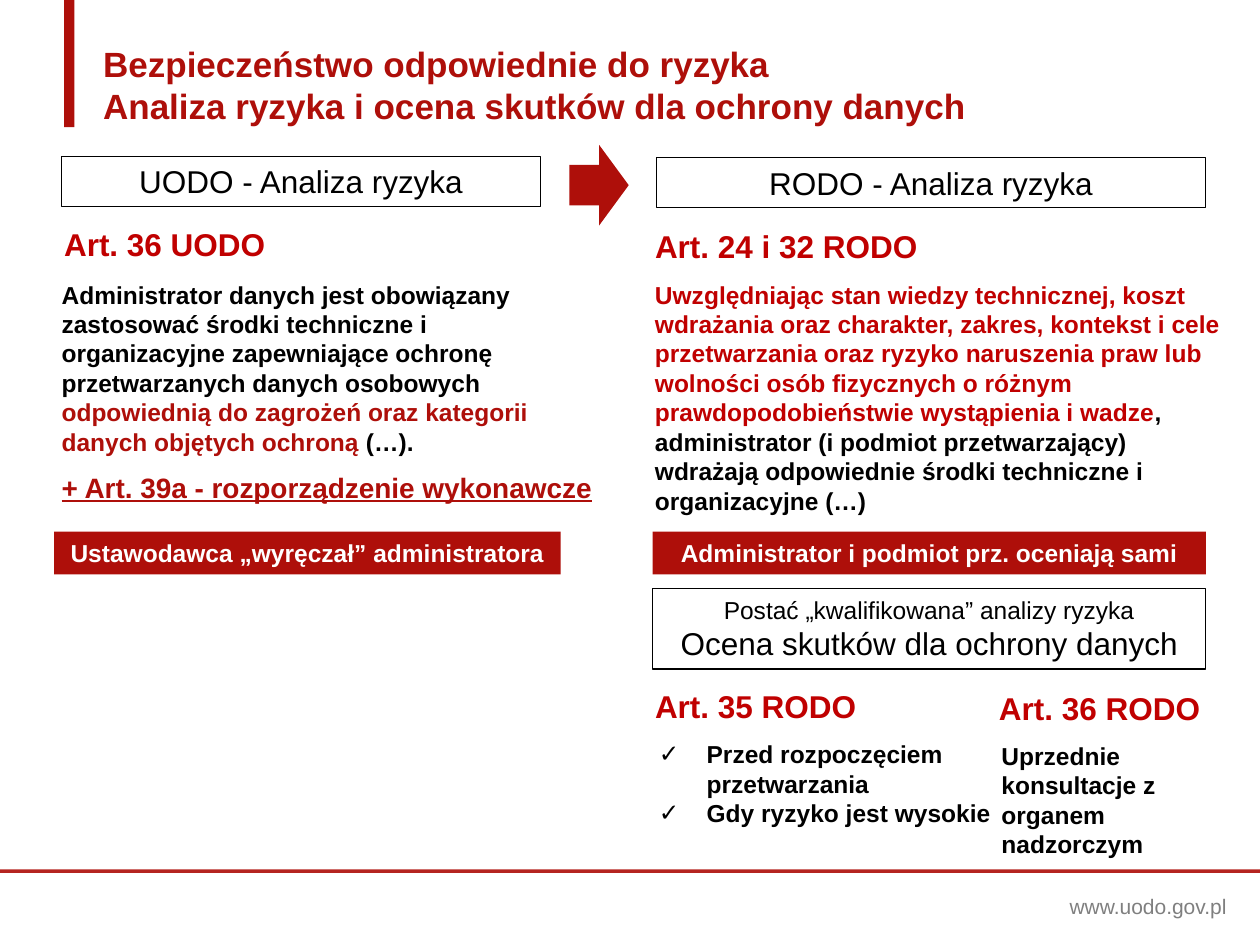
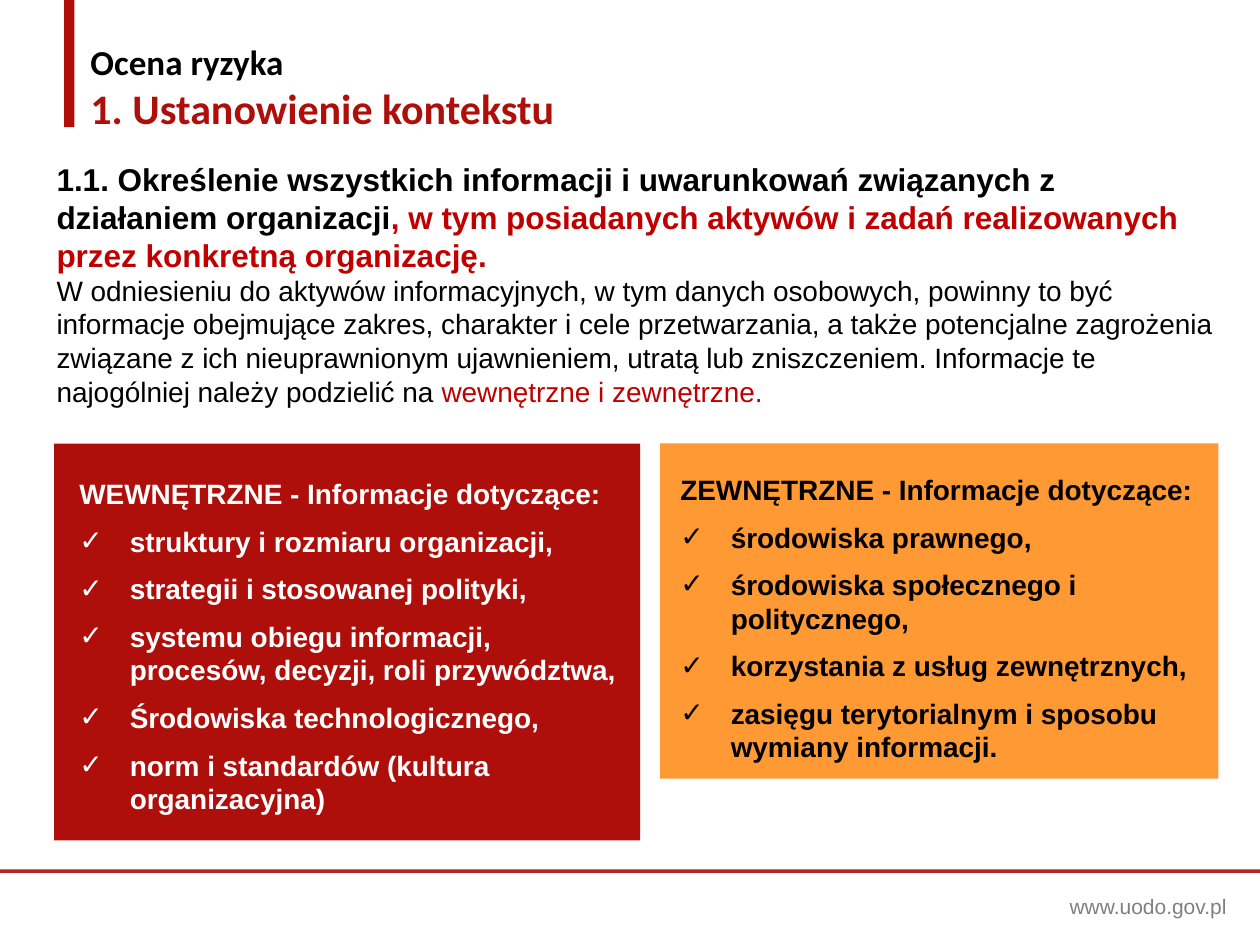
from dataclasses import dataclass, field
from typing import NamedTuple, Optional

from lxml.etree import SubElement
from pptx import Presentation
from pptx.dml.color import RGBColor
from pptx.enum.shapes import MSO_SHAPE
from pptx.enum.text import MSO_ANCHOR, PP_ALIGN
from pptx.oxml.ns import qn
from pptx.util import Inches, Pt

COLS, ROWS = 100, 75
COLORS = {
    "brand": "AE0F0A",
    "accent": "C00000",
    "orange": "FF9933",
    "black": "000000",
    "white": "FFFFFF",
    "gray": "7F7F7F",
}

prs = Presentation()
prs.slide_width, prs.slide_height = Inches(10), Inches(7.5)


class Box(NamedTuple):
    col: float
    row: float
    cols: float
    rows: float


class Run(NamedTuple):
    text: str
    color: str = "black"
    size: float = 14
    bold: bool = True
    underline: bool = False
    font: str = "Arial"


class Para(NamedTuple):
    runs: list[Run]
    before: float = 0
    indent: float = 0


@dataclass
class Block:
    box: Box
    paras: list[Para] = field(default_factory=list)
    fill: Optional[str] = None
    line: Optional[str] = None
    shape: Optional[MSO_SHAPE] = None
    alpha: int = 100
    center: bool = False
    anchor: MSO_ANCHOR = MSO_ANCHOR.TOP
    insets: tuple[float, float, float, float] = (0.1, 0.05, 0.1, 0.05)


def rgb(name: str) -> RGBColor:
    return RGBColor.from_string(COLORS[name])


def para(text: str, *, before: float = 0, indent: float = 0, **fmt) -> Para:
    return Para([Run(text, **fmt)], before, indent)


def add_bullet(p, indent: float) -> None:
    pPr = p._p.get_or_add_pPr()
    pPr.set("marL", str(Inches(indent)))
    pPr.set("indent", str(-Inches(indent)))
    SubElement(pPr, qn("a:buFont")).set("typeface", "Arial")
    SubElement(pPr, qn("a:buChar")).set("char", "✓")


def fill_text(tf, block: Block) -> None:
    tf.word_wrap = True
    tf.vertical_anchor = block.anchor
    tf.margin_left, tf.margin_top, tf.margin_right, tf.margin_bottom = map(Inches, block.insets)
    for i, item in enumerate(block.paras):
        p = tf.add_paragraph() if i else tf.paragraphs[0]
        p.alignment = PP_ALIGN.CENTER if block.center else PP_ALIGN.LEFT
        p.space_before = Pt(item.before)
        if item.indent:
            add_bullet(p, item.indent)
        for run in item.runs:
            r = p.add_run()
            r.text = run.text
            r.font.name = run.font
            r.font.size = Pt(run.size)
            r.font.bold = run.bold
            r.font.underline = run.underline
            r.font.color.rgb = rgb(run.color)


def draw(slide, block: Block) -> None:
    box = block.box
    place = (
        int(prs.slide_width * box.col / COLS),
        int(prs.slide_height * box.row / ROWS),
        int(prs.slide_width * box.cols / COLS),
        int(prs.slide_height * box.rows / ROWS),
    )
    if block.shape is None:
        sp = slide.shapes.add_textbox(*place)
    else:
        sp = slide.shapes.add_shape(block.shape, *place)
        sp.shadow.inherit = False
        if block.fill:
            sp.fill.solid()
            sp.fill.fore_color.rgb = rgb(block.fill)
        else:
            sp.fill.background()
        if block.line:
            sp.line.color.rgb = rgb(block.line)
            sp.line.width = Pt(0.75)
        else:
            sp.line.fill.background()
        if block.alpha < 100:
            clr = sp.fill._xPr.find(qn("a:solidFill"))[0]
            SubElement(clr, qn("a:alpha")).set("val", str(block.alpha * 1000))
    if block.paras:
        fill_text(sp.text_frame, block)


def panel(box: Box, fill: str, *paras: Para, **kw) -> Block:
    return Block(box, list(paras), fill=fill, shape=MSO_SHAPE.RECTANGLE, **kw)


def frame(box: Box, *paras: Para) -> Block:
    return Block(box, list(paras), line="black", shape=MSO_SHAPE.RECTANGLE, center=True)


def article(col: float, row: float, text: str, cols: float = 29.1) -> Block:
    return Block(Box(col, row, cols, 4), [para(text, size=18, color="accent")])


def banner(col: float, cols: float, text: str) -> Block:
    return panel(Box(col, 42.2, cols, 3.4), "brand", para(text, color="white"), center=True)


def info_list(box: Box, fill: str, color: str, insets: tuple, heading: str,
              items: list[str]) -> Block:
    bullets = [para(t, size=16, color=color, before=8, indent=0.4) for t in items]
    return panel(box, fill, para(heading, size=16, color=color), *bullets,
                 anchor=MSO_ANCHOR.BOTTOM, insets=insets)


SHARED = [
    panel(Box(0, 69, COLS, 0.7), "brand", alpha=91),
    panel(Box(0, 69.3, COLS, 5.6), "white"),
    Block(Box(83.9, 70.4, 16.1, 3), [para("www.uodo.gov.pl", size=12, color="gray", bold=False)]),
    panel(Box(5.1, 0, 0.8, 10.1), "brand"),
]

RIGHT, RIGHT_COLS = 51.8, 43.9

RISK_ANALYSIS = [
    Block(Box(7.2, 2.9, 76, 7.7), [
        para(t, size=20, color="brand") for t in (
            "Bezpieczeństwo odpowiednie do ryzyka",
            "Analiza ryzyka i ocena skutków dla ochrony danych",
        )
    ]),
    frame(Box(4.9, 12.4, 38, 4), para("UODO - Analiza ryzyka", size=18, bold=False)),
    Block(Box(45.2, 11.5, 4.7, 6.4), fill="brand", shape=MSO_SHAPE.RIGHT_ARROW),
    frame(Box(52.1, 12.5, 43.6, 4), para("RODO - Analiza ryzyka", size=18, bold=False)),
    article(4.1, 17.4, "Art. 36 UODO", 18.1),
    article(51, 17.5, "Art. 24 i 32 RODO"),
    Block(Box(3.9, 21.7, 44.5, 20.4), [
        Para([
            Run("Administrator danych jest obowiązany zastosować środki techniczne i "
                "organizacyjne zapewniające ochronę przetwarzanych danych osobowych "),
            Run("odpowiednią do zagrożeń oraz kategorii danych objętych ochroną ", "brand"),
            Run("(…)."),
        ]),
        para("+ Art. 39a - rozporządzenie wykonawcze", size=16, color="brand",
             underline=True, before=8),
    ]),
    Block(Box(51, 21.7, 47, 19.9), [
        Para([
            Run("Uwzględniając stan wiedzy technicznej, koszt wdrażania oraz charakter, "
                "zakres, kontekst i cele przetwarzania oraz ryzyko naruszenia praw lub "
                "wolności osób fizycznych o różnym prawdopodobieństwie wystąpienia i wadze",
                "accent"),
            Run(", administrator (i podmiot przetwarzający) wdrażają odpowiednie środki "
                "techniczne i organizacyjne (…)"),
        ]),
    ]),
    banner(4.3, 40.2, "Ustawodawca „wyręczał” administratora"),
    banner(RIGHT, RIGHT_COLS, "Administrator i podmiot prz. oceniają sami"),
    frame(Box(RIGHT, 46.7, RIGHT_COLS, 6.4),
          para("Postać „kwalifikowana” analizy ryzyka", bold=False),
          para("Ocena skutków dla ochrony danych", size=18, bold=False)),
    article(51, 54, "Art. 35 RODO"),
    article(78.3, 54.2, "Art. 36 RODO", 19),
    Block(Box(51.3, 58.2, 28.9, 11.6), [
        para(t, indent=0.38) for t in ("Przed rozpoczęciem przetwarzania",
                                       "Gdy ryzyko jest wysokie")
    ]),
    Block(Box(78.5, 58.3, 18, 10.4), [para("Uprzednie konsultacje z organem nadzorczym")]),
]

CONTEXT = [
    Block(Box(6.2, 2.7, 67.4, 8.4), [
        para("Ocena ryzyka", size=20, font="Calibri"),
        para("1. Ustanowienie kontekstu", size=24, font="Calibri", color="brand"),
    ]),
    Block(Box(3.5, 12.2, 94.5, 20.9), [
        Para([
            Run("1.1. Określenie wszystkich informacji i uwarunkowań związanych z "
                "działaniem organizacji", size=18),
            Run(", w tym posiadanych aktywów i zadań realizowanych przez konkretną "
                "organizację.", "accent", 18),
        ]),
        Para([
            Run("W odniesieniu do aktywów informacyjnych, w tym danych osobowych, powinny "
                "to być informacje obejmujące zakres, charakter i cele przetwarzania, a "
                "także potencjalne zagrożenia związane z ich nieuprawnionym ujawnieniem, "
                "utratą lub zniszczeniem. Informacje te najogólniej należy podzielić na ",
                size=16, bold=False),
            Run("wewnętrzne i zewnętrzne.", "accent", 16, False),
        ]),
    ]),
    info_list(Box(4.3, 35.2, 46.5, 31.5), "brand", "white", (0.2, 0.12, 0.04, 0.2),
              "WEWNĘTRZNE - Informacje dotyczące:", [
                  "struktury i rozmiaru organizacji,",
                  "strategii i stosowanej polityki,",
                  "systemu obiegu informacji, procesów, decyzji, roli przywództwa,",
                  "Środowiska technologicznego,",
                  "norm i standardów (kultura organizacyjna)",
              ]),
    info_list(Box(52.4, 35.2, 44.3, 26.6), "orange", "black", (0.16, 0.12, 0.04, 0.12),
              "ZEWNĘTRZNE - Informacje dotyczące:", [
                  "środowiska prawnego,",
                  "środowiska społecznego i politycznego,",
                  "korzystania z usług zewnętrznych,",
                  "zasięgu terytorialnym i sposobu wymiany informacji.",
              ]),
]


def main() -> None:
    for blocks in (RISK_ANALYSIS, CONTEXT):
        slide = prs.slides.add_slide(prs.slide_layouts[6])
        for block in SHARED + blocks:
            draw(slide, block)
    prs.save("out.pptx")


if __name__ == "__main__":
    main()
